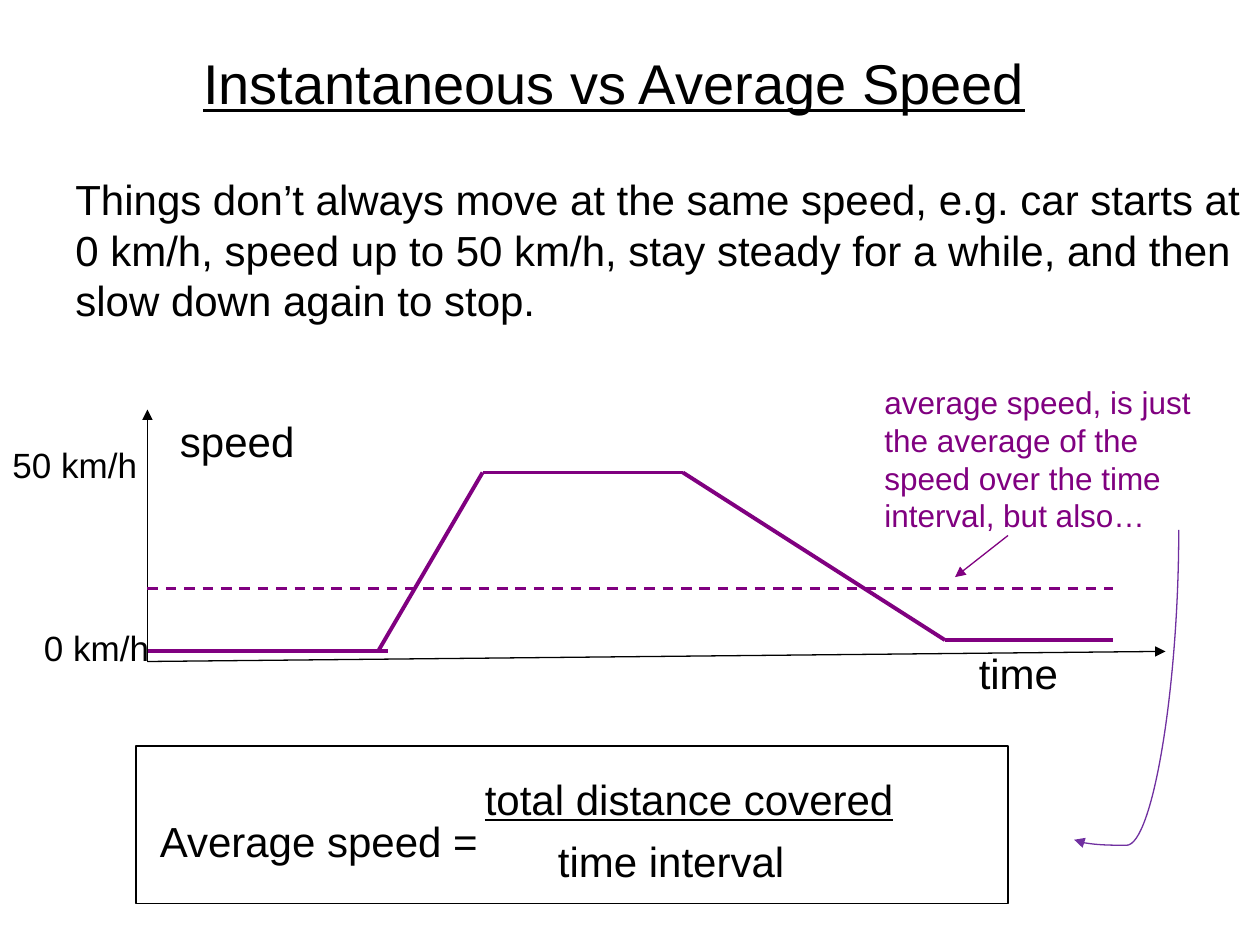
"""Build a slide that compares instantaneous and average speed."""
from lxml.etree import SubElement
from pptx import Presentation
from pptx.dml.color import RGBColor
from pptx.enum.dml import MSO_LINE
from pptx.enum.shapes import MSO_CONNECTOR, MSO_SHAPE
from pptx.enum.text import MSO_ANCHOR, MSO_AUTO_SIZE, PP_ALIGN
from pptx.oxml.ns import qn
from pptx.util import Inches, Pt

COLORS = {"text": "000000", "speed": "800080", "pointer": "7030A0"}


def add_run(paragraph, text, size, color="text", underline=None):
    run = paragraph.add_run()
    run.text = text
    run.font.name = "Arial"
    run.font.size = Pt(size)
    run.font.underline = underline
    run.font.color.rgb = RGBColor.from_string(COLORS[color])


def add_line(shapes, start, end, color, width, arrow=False, kind=MSO_CONNECTOR.STRAIGHT):
    points = [Inches(value) for value in (*start, *end)]
    connector = shapes.add_connector(kind, *points)
    connector.line.color.rgb = RGBColor.from_string(COLORS[color])
    connector.line.width = Pt(width)
    if arrow:
        SubElement(connector.line._get_or_add_ln(), qn("a:tailEnd"), type="triangle")
    SubElement(connector._element.spPr, qn("a:effectLst"))
    return connector


presentation = Presentation()
presentation.slide_width = Inches(10)
presentation.slide_height = Inches(7.5)
slide = presentation.slides.add_slide(presentation.slide_layouts[5])
shapes = slide.shapes

title = shapes.title
title.left, title.top = Inches(0.5), Inches(0.3)
title.width, title.height = Inches(8.75), Inches(0.7)
title.text_frame.vertical_anchor = MSO_ANCHOR.MIDDLE
title_paragraph = title.text_frame.paragraphs[0]
title_paragraph.alignment = PP_ALIGN.CENTER
add_run(title_paragraph, "Instantaneous vs Average Speed", 32, underline=True)

texts = [
    ("Things don’t always move at the same speed, e.g. car starts at 0 km/h, speed up "
     "to 50 km/h, stay steady for a while, and then slow down again to stop.",
     (0.5, 1.33, 9.5, 1.31), 24, "text", None, True),
    ("Average speed =", (1.17, 6.42, 3.67, 0.5), 24, "text", None, True),
    ("total distance covered", (3.75, 6.09, 5, 0.5), 24, "text", True, True),
    ("time interval", (4.33, 6.58, 3.2, 0.5), 24, "text", None, True),
    ("50 km/h", (0, 3.47, 1.19, 0.43), 20, "text", None, False),
    ("0 km/h", (0.25, 4.92, 1.42, 0.43), 20, "text", None, True),
    ("time", (7.67, 5.09, 0.83, 0.5), 24, "text", None, False),
    ("speed", (1.33, 3.25, 1.11, 0.5), 24, "text", None, False),
    ("average speed, is just the average of the speed over the time interval, but also…",
     (6.92, 2.99, 2.83, 1.31), 18, "speed", None, True),
]
for text, box, size, color, underline, wrap in texts:
    text_frame = shapes.add_textbox(*[Inches(value) for value in box]).text_frame
    text_frame.word_wrap = wrap
    text_frame.auto_size = MSO_AUTO_SIZE.SHAPE_TO_FIT_TEXT
    add_run(text_frame.paragraphs[0], text, size, color, underline)

formula_box = shapes.add_shape(
    MSO_SHAPE.RECTANGLE, Inches(1.08), Inches(5.92), Inches(6.92), Inches(1.25))
formula_box.shadow.inherit = False
formula_box.fill.background()
formula_box.line.color.rgb = RGBColor.from_string(COLORS["text"])
formula_box.line.width = Pt(0.75)

speed_graph = shapes.add_group_shape()
segments = [
    ((1.17, 5.17), (3.08, 5.17)),
    ((3, 5.17), (3.83, 3.75)),
    ((3.83, 3.75), (5.42, 3.75)),
    ((5.42, 3.75), (7.5, 5.08)),
    ((7.5, 5.08), (8.83, 5.08)),
]
for start, end in segments:
    add_line(speed_graph.shapes, start, end, "speed", 2.25)

origin = (1.17, 5.25)
for axis_end in ((1.17, 3.25), (9.25, 5.17)):
    add_line(shapes, origin, axis_end, "text", 0.75, arrow=True)

average_line = add_line(shapes, (1.17, 4.67), (8.83, 4.67), "speed", 1.5)
average_line.line.dash_style = MSO_LINE.DASH
add_line(shapes, (8, 4.25), (7.58, 4.58), "speed", 0.75, arrow=True)

formula_pointer = add_line(shapes, (7.71, 5.02), (10.17, 5.85), "pointer", 0.75,
                           arrow=True, kind=MSO_CONNECTOR.CURVE)
properties = formula_pointer._element.spPr
properties.find(qn("a:xfrm")).set("rot", str(90 * 60000))
geometry = properties.find(qn("a:prstGeom"))
adjustments = geometry.find(qn("a:avLst"))
if adjustments is None:
    adjustments = SubElement(geometry, qn("a:avLst"))
SubElement(adjustments, qn("a:gd"), name="adj1", fmla="val 101800")

presentation.save("out.pptx")
